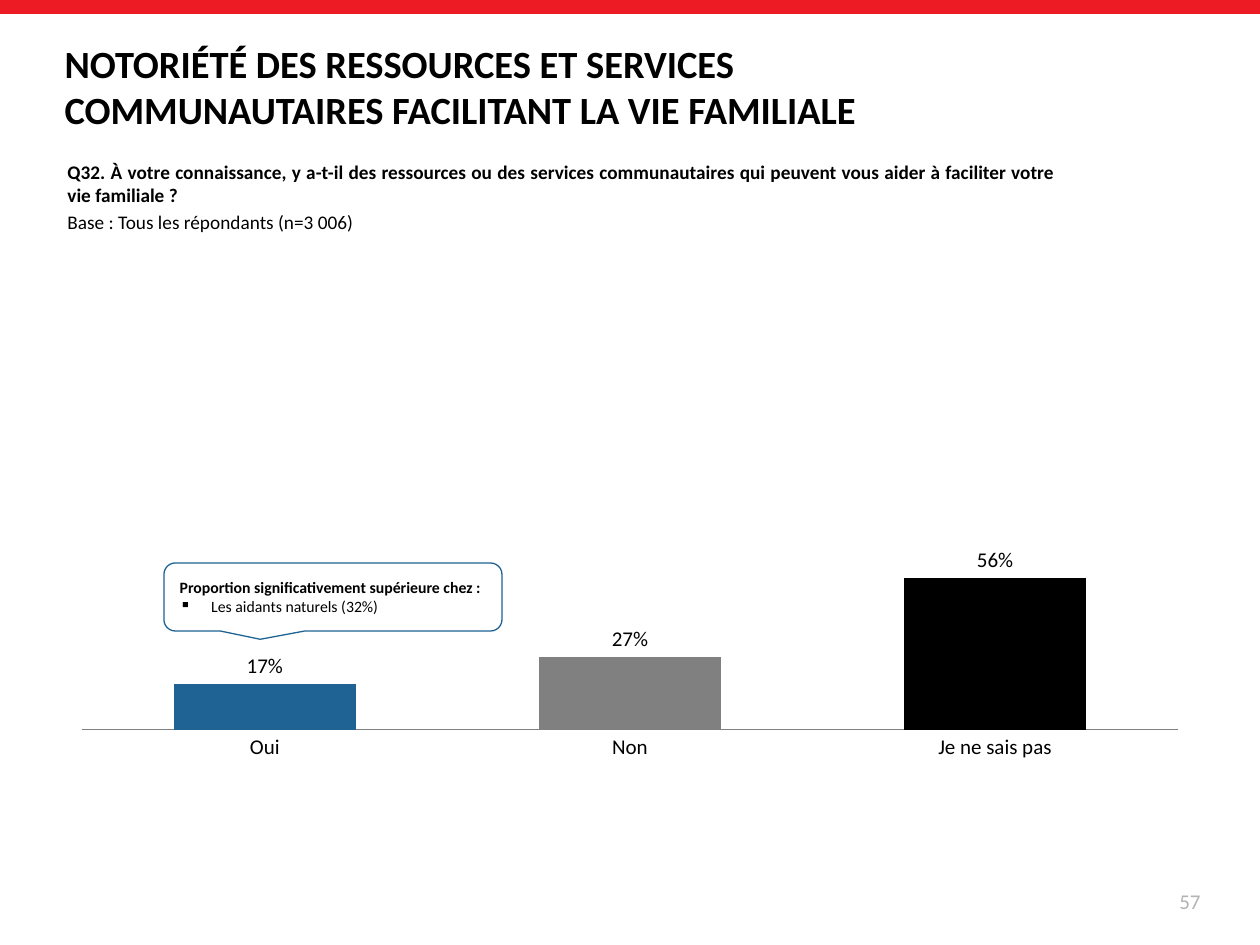
from lxml.etree import SubElement
from pptx import Presentation
from pptx.chart.data import CategoryChartData
from pptx.dml.color import RGBColor
from pptx.enum.chart import XL_CHART_TYPE, XL_LABEL_POSITION, XL_TICK_MARK
from pptx.enum.shapes import MSO_SHAPE
from pptx.enum.text import MSO_ANCHOR, MSO_AUTO_SIZE, PP_ALIGN
from pptx.oxml import parse_xml
from pptx.oxml.ns import nsdecls, qn
from pptx.util import Inches, Pt

# Content
TITLE = "NOTORIÉTÉ DES RESSOURCES ET SERVICES COMMUNAUTAIRES FACILITANT LA VIE FAMILIALE"
QUESTION = [
    "Q32. À votre connaissance, y a-t-il des ressources ou des services communautaires "
    "qui peuvent vous aider à faciliter votre vie familiale ?",
    "Base : Tous les répondants (n=3 006)",
]
CALLOUT = ["Proportion significativement supérieure chez :", "Les aidants naturels (32%)"]
PAGE_NUMBER = "57"

FONT = "Calibri"
RED = RGBColor(0xED, 0x1C, 0x24)
BLUE = RGBColor(0x1F, 0x63, 0x94)
GREY = RGBColor(0x80, 0x80, 0x80)
PALE_GREY = RGBColor(0xB3, 0xB3, 0xB3)
BLACK = RGBColor(0, 0, 0)
WHITE = RGBColor(0xFF, 0xFF, 0xFF)

ANSWERS = [("Oui", 0.17, BLUE), ("Non", 0.27, GREY), ("Je ne sais pas", 0.56, BLACK)]
PLOT_AREA = {"x": 0.017, "y": 0.371, "w": 0.966, "h": 0.44}


def px(*lengths):
    return [round(length * Inches(1) / 126) for length in lengths]


def style(font, size, color=BLACK, bold=False):
    font.name, font.size, font.bold = FONT, Pt(size), bold
    font.color.rgb = color


def write(shape, lines, size, color=BLACK, bold_first=False,
          align=PP_ALIGN.LEFT, anchor=MSO_ANCHOR.MIDDLE):
    frame = shape.text_frame
    frame.text = "\n".join(lines)
    frame.word_wrap = True
    frame.auto_size = MSO_AUTO_SIZE.NONE
    frame.vertical_anchor = anchor
    for index, paragraph in enumerate(frame.paragraphs):
        paragraph.alignment = align
        for run in paragraph.runs:
            style(run.font, size, color, bold_first and index == 0)
    return frame.paragraphs


prs = Presentation()
prs.slide_width, prs.slide_height = px(1260, 945)
slide = prs.slides.add_slide(prs.slide_layouts[5])
shapes = slide.shapes

# Top band
band = shapes.add_shape(MSO_SHAPE.RECTANGLE, *px(0, 0, 1260, 14))
band.shadow.inherit = False
band.fill.solid()
band.fill.fore_color.rgb = RED
band.line.fill.background()

# Title, question and page number
title = shapes.title
title.left, title.top, title.width, title.height = px(52, 53, 965, 66)
write(title, [TITLE], 22, bold_first=True)

question = shapes.add_textbox(*px(55, 154, 1013, 149))
base = write(question, QUESTION, 11, bold_first=True,
             align=PP_ALIGN.JUSTIFY, anchor=MSO_ANCHOR.TOP)[1]
base.space_before = Pt(2.2)

page_number = shapes.add_textbox(*px(919, 876, 294, 50))
write(page_number, [PAGE_NUMBER], 12, PALE_GREY, align=PP_ALIGN.RIGHT)

# Chart of answers
answer_data = CategoryChartData(number_format="0%")
answer_data.categories = [answer for answer, _, _ in ANSWERS]
answer_data.add_series("Series 1", [share for _, share, _ in ANSWERS])
chart = shapes.add_chart(XL_CHART_TYPE.COLUMN_CLUSTERED, *px(63, 231, 1134, 615),
                         answer_data).chart
chart.has_legend = chart.has_title = False
style(chart.font, 12)

share_axis = chart.value_axis
share_axis.minimum_scale, share_axis.maximum_scale = 0, 1
share_axis.has_major_gridlines = False
share_axis.visible = False
answer_axis = chart.category_axis
answer_axis.major_tick_mark = XL_TICK_MARK.NONE
answer_axis.format.line.color.rgb = GREY

columns = chart.plots[0]
columns.gap_width = 100
columns.vary_by_categories = False
columns.has_data_labels = True
labels = columns.data_labels
labels.show_value = True
labels.position = XL_LABEL_POSITION.OUTSIDE_END
labels.number_format, labels.number_format_is_linked = "0%", False
style(labels.font, 12)
for index, (_, _, color) in enumerate(ANSWERS):
    fill = columns.series[0].points[index].format.fill
    fill.solid()
    fill.fore_color.rgb = color

# Fixed position of the plot area inside the chart
plot_area = chart.element.find(".//" + qn("c:plotArea"))
for layout in plot_area.findall(qn("c:layout")):
    plot_area.remove(layout)
layout = parse_xml(
    f'<c:layout {nsdecls("c")}><c:manualLayout><c:layoutTarget val="inner"/>'
    '<c:xMode val="edge"/><c:yMode val="edge"/></c:manualLayout></c:layout>')
for side, fraction in PLOT_AREA.items():
    SubElement(layout[0], qn(f"c:{side}")).set("val", str(fraction))
plot_area.insert(0, layout)

# Callout above the first column
callout = shapes.add_shape(MSO_SHAPE.ROUNDED_RECTANGULAR_CALLOUT, *px(164, 563, 338, 68))
for index, adjustment in enumerate((-0.215, 0.622, 0.167)):
    callout.adjustments[index] = adjustment
callout.shadow.inherit = False
callout.fill.solid()
callout.fill.fore_color.rgb = WHITE
callout.line.color.rgb = BLUE
callout.line.width = Pt(0.75)
bullet_item = write(callout, CALLOUT, 9, bold_first=True)[1]
properties = bullet_item._p.get_or_add_pPr()
properties.set("marL", str(Inches(0.25)))
properties.set("indent", str(-Inches(0.25)))
SubElement(properties, qn("a:buChar")).set("char", "▪")

prs.save("out.pptx")
